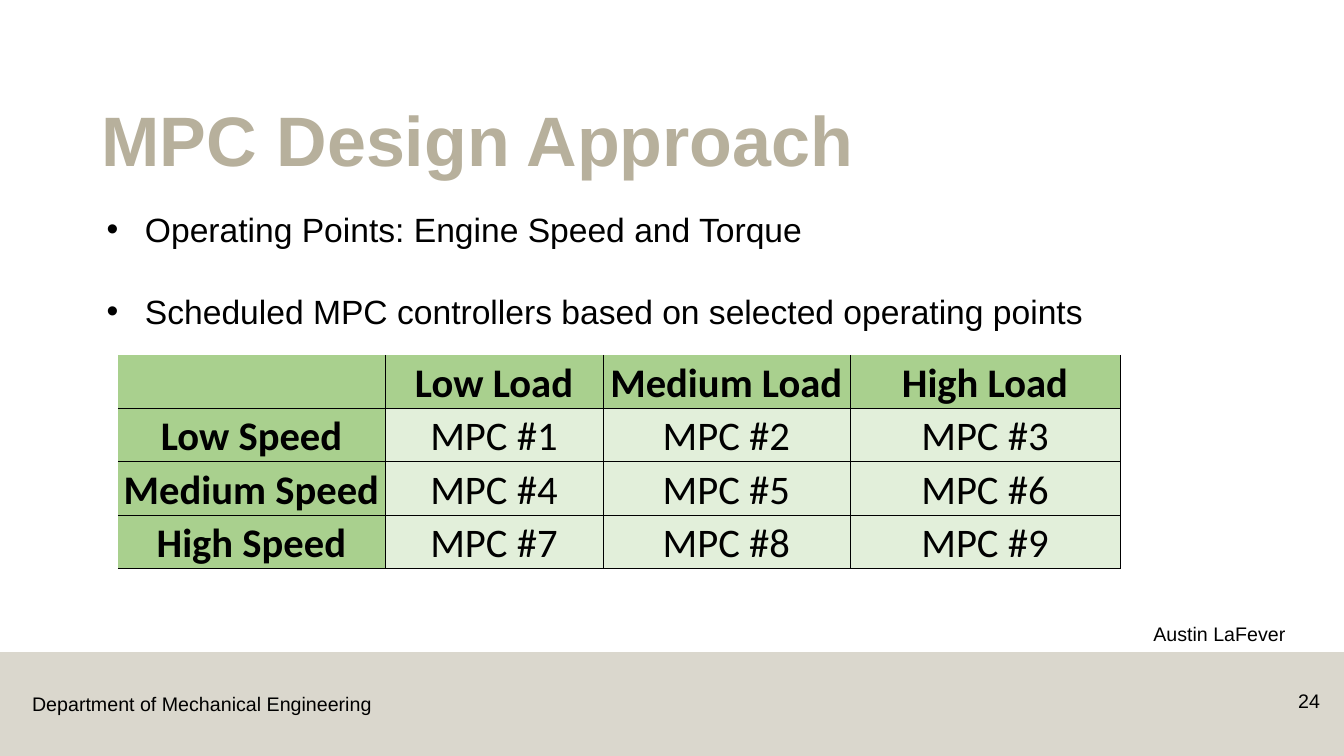
from dataclasses import dataclass

from lxml.etree import SubElement
from pptx import Presentation
from pptx.dml.color import RGBColor as RGB
from pptx.enum.shapes import MSO_SHAPE as SHAPE
from pptx.enum.text import MSO_ANCHOR as ANCHOR, PP_ALIGN as ALIGN
from pptx.oxml import parse_xml
from pptx.oxml.ns import nsdecls, qn
from pptx.util import Inches, Pt


@dataclass(frozen=True)
class Theme:
    """Colours, fonts and type sizes of the slide."""
    stone: RGB = RGB.from_string("B7B09C")
    ink: RGB = RGB.from_string("000000")
    header: RGB = RGB.from_string("A9D08E")
    body: RGB = RGB.from_string("E2EFDA")
    font: str = "Arial"
    table_font: str = "Calibri"
    title: int = 50
    bullet: int = 24
    cell: int = 29
    small: int = 14


THEME = Theme()
BULLETS = ["Operating Points: Engine Speed and Torque",
           "Scheduled MPC controllers based on selected operating points"]
LOADS = ["Low Load", "Medium Load", "High Load"]
SPEEDS = ["Low Speed", "Medium Speed", "High Speed"]


def set_font(p, size, **extra):
    """Apply the theme font and any extra values to a paragraph's runs."""
    color = extra.pop("color", THEME.ink)
    values = {"name": THEME.font, "size": Pt(size), "bold": False, **extra}
    for r in p.runs:
        for key, value in values.items():
            setattr(r.font, key, value)
        r.font.color.rgb = color


def add_text(s, box, lines, size, anchor=ANCHOR.TOP, align=ALIGN.LEFT, **extra):
    """Add a wrapped text box and return its paragraphs."""
    tf = s.shapes.add_textbox(*map(Inches, box)).text_frame
    tf.word_wrap = True
    tf.vertical_anchor = anchor
    tf.text = "\n".join(lines)
    for p in tf.paragraphs:
        p.alignment = align
        set_font(p, size, **extra)
    return tf.paragraphs


def add_footer(s, box):
    """Draw the translucent band with department, slide number and speaker."""
    left, top, width, height = box
    band = s.shapes.add_shape(SHAPE.RECTANGLE, *map(Inches, box))
    band.shadow.inherit = False
    band.fill.solid()
    band.fill.fore_color.rgb = THEME.stone
    band.line.fill.background()
    color = band.fill._xPr.find(qn("a:solidFill"))[0]
    SubElement(color, qn("a:alpha"), val="50000")
    right = left + width
    add_text(s, (left + 0.22, top + 0.35, 3.8, 0.34),
             ["Department of Mechanical Engineering"], THEME.small)
    add_text(s, (right - 0.91, top + 0.32, 0.77, 0.4), ["24"], THEME.small,
             align=ALIGN.RIGHT)
    add_text(s, (right - 1.99, top - 0.35, 1.99, 0.34), ["Austin LaFever"], THEME.small)


def add_title(s, box):
    """Place the slide title at the bottom of its box."""
    p, = add_text(s, box, ["MPC Design Approach"], THEME.title, ANCHOR.BOTTOM,
                  bold=True, color=THEME.stone)
    p.line_spacing = 0.9


def add_bullets(s, box):
    """Place the bulleted statements with a wide gap between them."""
    for i, p in enumerate(add_text(s, box, BULLETS, THEME.bullet)):
        p.space_before = Pt(30 if i else 0)
        pPr = p._p.get_or_add_pPr()
        pPr.set("marL", str(Inches(0.38)))
        pPr.set("indent", str(-Inches(0.38)))
        SubElement(pPr, qn("a:buFont"), typeface=THEME.font)
        SubElement(pPr, qn("a:buChar"), char="•")


def set_borders(cell, row, col):
    """Rule a cell on every side except the table's outer left and top."""
    shown = {"L": col > 0, "R": True, "T": row > 0, "B": True}
    for i, (side, visible) in enumerate(shown.items()):
        fill = (f'<a:solidFill><a:srgbClr val="{THEME.ink}"/></a:solidFill>'
                if visible else "<a:noFill/>")
        line = f'<a:ln{side} {nsdecls("a")} w="{Pt(0.5)}">{fill}</a:ln{side}>'
        cell._tc.get_or_add_tcPr().insert(i, parse_xml(line))


def add_schedule(s, box):
    """Add the table of controllers by engine speed and load."""
    rows = [[""] + LOADS]
    for i, speed in enumerate(SPEEDS):
        numbers = range(i * len(LOADS) + 1, (i + 1) * len(LOADS) + 1)
        rows.append([speed] + [f"MPC #{n}" for n in numbers])
    table = s.shapes.add_table(len(rows), len(rows[0]), *map(Inches, box)).table
    table.first_row = table.horz_banding = False
    for column, width in zip(table.columns, (2.65, 2.16, 2.45, 2.68)):
        column.width = Inches(width)
    layout = {"vertical_anchor": ANCHOR.BOTTOM, "margin_left": Inches(0.03),
              "margin_right": Inches(0.03), "margin_top": Inches(0.03),
              "margin_bottom": 0}
    for i, texts in enumerate(rows):
        for j, text in enumerate(texts):
            cell = table.cell(i, j)
            heading = i == 0 or j == 0
            for key, value in layout.items():
                setattr(cell, key, value)
            cell.fill.solid()
            cell.fill.fore_color.rgb = THEME.header if heading else THEME.body
            cell.text = text
            p = cell.text_frame.paragraphs[0]
            p.alignment = ALIGN.CENTER
            set_font(p, THEME.cell, name=THEME.table_font, bold=heading)
            set_borders(cell, i, j)


def main():
    """Build the slide and save it."""
    prs = Presentation()
    prs.slide_width, prs.slide_height = Inches(13.33), Inches(7.5)
    s = prs.slides.add_slide(prs.slide_layouts[6])
    add_footer(s, (0, 6.47, 13.33, 1.03))
    add_title(s, (0.91, 0.75, 11.5, 1.1))
    add_bullets(s, (0.96, 2.02, 10.93, 1.4))
    add_schedule(s, (1.17, 3.52, 9.94, 2.12))
    prs.save("out.pptx")


if __name__ == "__main__":
    main()
